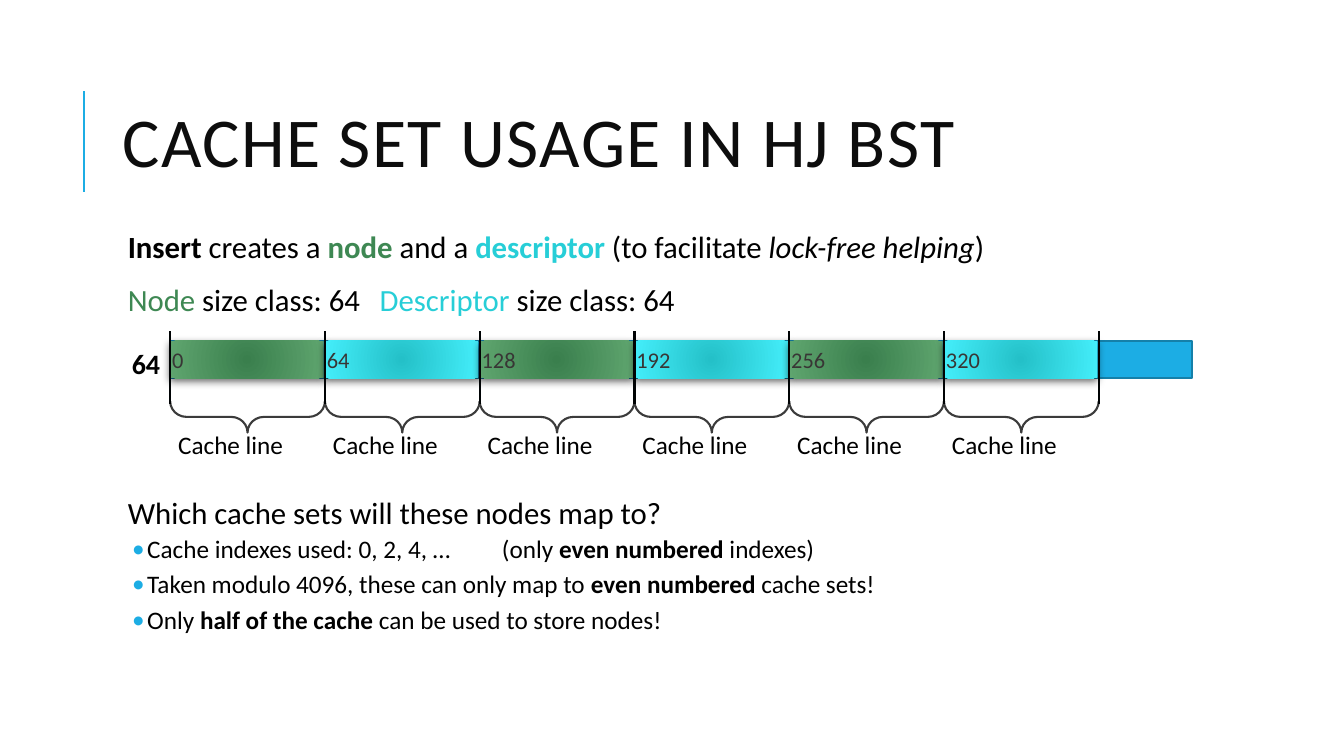
from lxml import etree
from pptx import Presentation
from pptx.dml.color import RGBColor
from pptx.enum.shapes import MSO_CONNECTOR, MSO_SHAPE
from pptx.enum.text import MSO_ANCHOR, MSO_AUTO_SIZE, PP_ALIGN
from pptx.oxml.ns import qn
from pptx.util import Cm, Pt

RECTANGLE, BRACE = MSO_SHAPE.RECTANGLE, MSO_SHAPE.LEFT_BRACE
STRAIGHT = MSO_CONNECTOR.STRAIGHT
TOP, MIDDLE = MSO_ANCHOR.TOP, MSO_ANCHOR.MIDDLE
LEFT, RIGHT = PP_ALIGN.LEFT, PP_ALIGN.RIGHT
NO_FIT = MSO_AUTO_SIZE.NONE

FONT = "Calibri"
COLORS = {
    "background": "FFFFFF", "text": "000000", "title": "0D0D0D",
    "accent": "1CADE4", "bar_edge": "1580A9", "brace": "3B3B3B",
    "tick": "000304", "address": "383635",
    "node": "3E8853", "descriptor": "27CED7",
    "node_center": "3A7F4D", "node_edge": "5FA56F",
    "descriptor_center": "24C0C8", "descriptor_edge": "44EEFA",
}
ADDRESSES = ["0", "64", "128", "192", "256", "320"]
BOLD = {"bold": True}
INTRODUCTION = [
    [("Insert", BOLD), (" creates a ", {}),
     ("node ", {"bold": True, "color": "node"}), ("and a ", {}),
     ("descriptor ", {"bold": True, "color": "descriptor"}),
     ("(to facilitate ", {}), ("lock-free helping", {"italic": True}), (")", {})],
    [("Node", {"color": "node"}), (" size class: 64\t", {}),
     ("Descriptor ", {"color": "descriptor"}), ("size class: 64", {})],
]
QUESTION = [("Which cache sets will these nodes map to?", {})]
ANSWERS = [
    [("Cache indexes used: 0, 2, 4, …\t(only ", {}),
     ("even numbered", BOLD), (" indexes)", {})],
    [("Taken modulo 4096, these can only map to ", {}),
     ("even numbered ", BOLD), ("cache sets!", {})],
    [("Only ", {}), ("half of the cache ", BOLD),
     ("can be used to store nodes!", {})],
]


def rgb(name):
    """Return the named colour."""
    return RGBColor.from_string(COLORS[name])


def add_text(paragraph, text, size=18, color="text", bold=False, italic=False):
    """Add a formatted run to a paragraph and return it."""
    run = paragraph.add_run()
    run.text = text
    font = run.font
    font.name, font.size, font.bold, font.italic = FONT, Pt(size), bold, italic
    font.color.rgb = rgb(color)
    return run


def set_frame(frame, inset, right, anchor, wrap=True):
    """Set the margins, anchor and wrapping of a text frame."""
    frame.margin_left, frame.margin_right = Cm(inset), Cm(right)
    frame.margin_top = frame.margin_bottom = Cm(0.13)
    frame.vertical_anchor, frame.word_wrap = anchor, wrap
    frame.auto_size = NO_FIT


def place(shape, left, top, width, height):
    """Move a placeholder into a box given in centimetres."""
    shape.left, shape.top = Cm(left), Cm(top)
    shape.width, shape.height = Cm(width), Cm(height)


def add_line(slide, x, top, bottom, color):
    """Draw a vertical line without a shadow."""
    line = slide.shapes.add_connector(STRAIGHT, Cm(x), Cm(bottom), Cm(x), Cm(top))
    line.line.color.rgb, line.line.width = rgb(color), Pt(1.5)
    etree.SubElement(line.element.spPr, qn("a:effectLst"))


def add_shape(slide, kind, left, top, width, height):
    """Add a preset shape without a shadow."""
    shape = slide.shapes.add_shape(kind, Cm(left), Cm(top), Cm(width), Cm(height))
    shape.shadow.inherit = False
    return shape


def add_label(slide, text, left, top, width, height, align=LEFT, inset=0.05, **style):
    """Add a one-line text box."""
    frame = slide.shapes.add_textbox(Cm(left), Cm(top), Cm(width), Cm(height)).text_frame
    set_frame(frame, inset, 0.25, TOP)
    frame.paragraphs[0].alignment = align
    add_text(frame.paragraphs[0], text, **style)


def add_title(slide, left, top, width, height):
    """Fill the title and draw the accent line to its left."""
    title = slide.shapes.title
    place(title, left, top, width, height)
    set_frame(title.text_frame, 0.25, 0.25, MIDDLE)
    paragraph = title.text_frame.paragraphs[0]
    paragraph.alignment, paragraph.line_spacing = LEFT, 0.8
    run = add_text(paragraph, "CACHE SET USAGE IN HJ BST", size=50, color="title")
    run.font._element.set("spc", "100")
    add_line(slide, left - 0.73, top + 0.66, top + 3.2, "accent")


def add_body_paragraph(frame, runs, size=22, before=12, after=2, bullet=False, tab=7.87):
    """Add a body paragraph with spacing, indent, bullet and tab stop."""
    first = frame.paragraphs[0]
    paragraph = frame.add_paragraph() if first.runs else first
    paragraph.alignment, paragraph.line_spacing = LEFT, 0.9
    paragraph.space_before, paragraph.space_after = Pt(before), Pt(after)
    paragraph.level = int(bullet)
    properties = paragraph._p.get_or_add_pPr()
    properties.set("marL", str(Cm(0.74 if bullet else 0.25)))
    properties.set("indent", str(Cm(-0.38 if bullet else 0)))
    if bullet:
        color = etree.SubElement(properties, qn("a:buClr"))
        etree.SubElement(color, qn("a:srgbClr"), val=COLORS["accent"])
        etree.SubElement(properties, qn("a:buFont"), typeface=FONT)
        etree.SubElement(properties, qn("a:buChar"), char="•")
    else:
        etree.SubElement(properties, qn("a:buNone"))
    tabs = etree.SubElement(properties, qn("a:tabLst"))
    etree.SubElement(tabs, qn("a:tab"), pos=str(Cm(tab)), algn="l")
    for text, style in runs:
        add_text(paragraph, text, size=size, **style)


def add_body(slide, left, top, width, height):
    """Fill the body, leaving room for the memory bar before the question."""
    body = slide.placeholders[1]
    place(body, left, top, width, height)
    frame = body.text_frame
    set_frame(frame, 0.13, 0.13, TOP)
    for runs in INTRODUCTION:
        add_body_paragraph(frame, runs)
    add_body_paragraph(frame, QUESTION, before=126)
    for runs in ANSWERS:
        add_body_paragraph(frame, runs, size=18, before=2, after=4, bullet=True, tab=9.68)


def add_cell(slide, address, kind, left, top, width, height):
    """Draw one shaded memory block with its address."""
    cell = add_shape(slide, RECTANGLE, left, top, width, height)
    cell.line.fill.background()
    cell.fill.gradient()
    for stop, part in zip(cell.fill.gradient_stops, ("center", "edge")):
        stop.color.rgb = rgb(f"{kind}_{part}")
    properties = cell.element.spPr
    linear = properties.find(".//" + qn("a:lin"))
    gradient = linear.getparent()
    gradient.remove(linear)
    circle = etree.SubElement(gradient, qn("a:path"), {"path": "circle"})
    etree.SubElement(circle, qn("a:fillToRect"), dict.fromkeys("ltrb", "50000"))
    shadow = etree.SubElement(properties.find(qn("a:effectLst")), qn("a:outerShdw"),
                              blurRad=str(Pt(6)), dist=str(Pt(2)), dir="5400000")
    black = etree.SubElement(shadow, qn("a:srgbClr"), val=COLORS["text"])
    etree.SubElement(black, qn("a:alpha"), val="60000")
    set_frame(cell.text_frame, 0.05, 0.25, MIDDLE)
    paragraph = cell.text_frame.paragraphs[0]
    paragraph.alignment = LEFT
    add_text(paragraph, address, size=16, color="address")


def add_brace(slide, left, top, width, height):
    """Draw a brace that opens upwards over the given box."""
    brace = add_shape(slide, BRACE, left + (width - height) / 2,
                      top - (width - height) / 2, height, width)
    brace.rotation = 270
    brace.adjustments[0] = 0.52
    brace.fill.background()
    brace.line.color.rgb, brace.line.width = rgb("brace"), Pt(1.5)


def add_memory(slide, left, top, width, height, pitch=3.9):
    """Draw the memory bar with its blocks, braces, labels and ticks."""
    bar = add_shape(slide, RECTANGLE, left, top, width, height)
    bar.fill.solid()
    bar.fill.fore_color.rgb = rgb("accent")
    bar.line.color.rgb, bar.line.width = rgb("bar_edge"), Pt(1.25)
    add_label(slide, "64", left - 1.65, top + 0.02, 1.65, 1.12,
              align=RIGHT, inset=0.25, size=20, bold=True)
    for index, address in enumerate(ADDRESSES):
        x = left + index * pitch
        add_brace(slide, x, top + 1.52, pitch, 0.79)
        add_label(slide, "Cache line", x + 0.15, top + 2.11, 3.55, 1.02)
        kind = "descriptor" if index % 2 else "node"
        add_cell(slide, address, kind, x, top, pitch - 0.03, height)
    for index in range(len(ADDRESSES) + 1):
        add_line(slide, left + index * pitch, top - 0.26, top + 1.59, "tick")


def main():
    """Build and save the slide."""
    presentation = Presentation()
    presentation.slide_width, presentation.slide_height = Cm(33.87), Cm(19.05)
    slide = presentation.slides.add_slide(presentation.slide_layouts[1])
    slide.background.fill.solid()
    slide.background.fill.fore_color.rgb = rgb("background")
    add_body(slide, 2.84, 5.72, 27, 12.22)
    add_title(slide, 2.84, 1.63, 27, 4.17)
    add_memory(slide, 4.29, 8.59, 25.76, 0.94)
    presentation.save("out.pptx")


if __name__ == "__main__":
    main()
